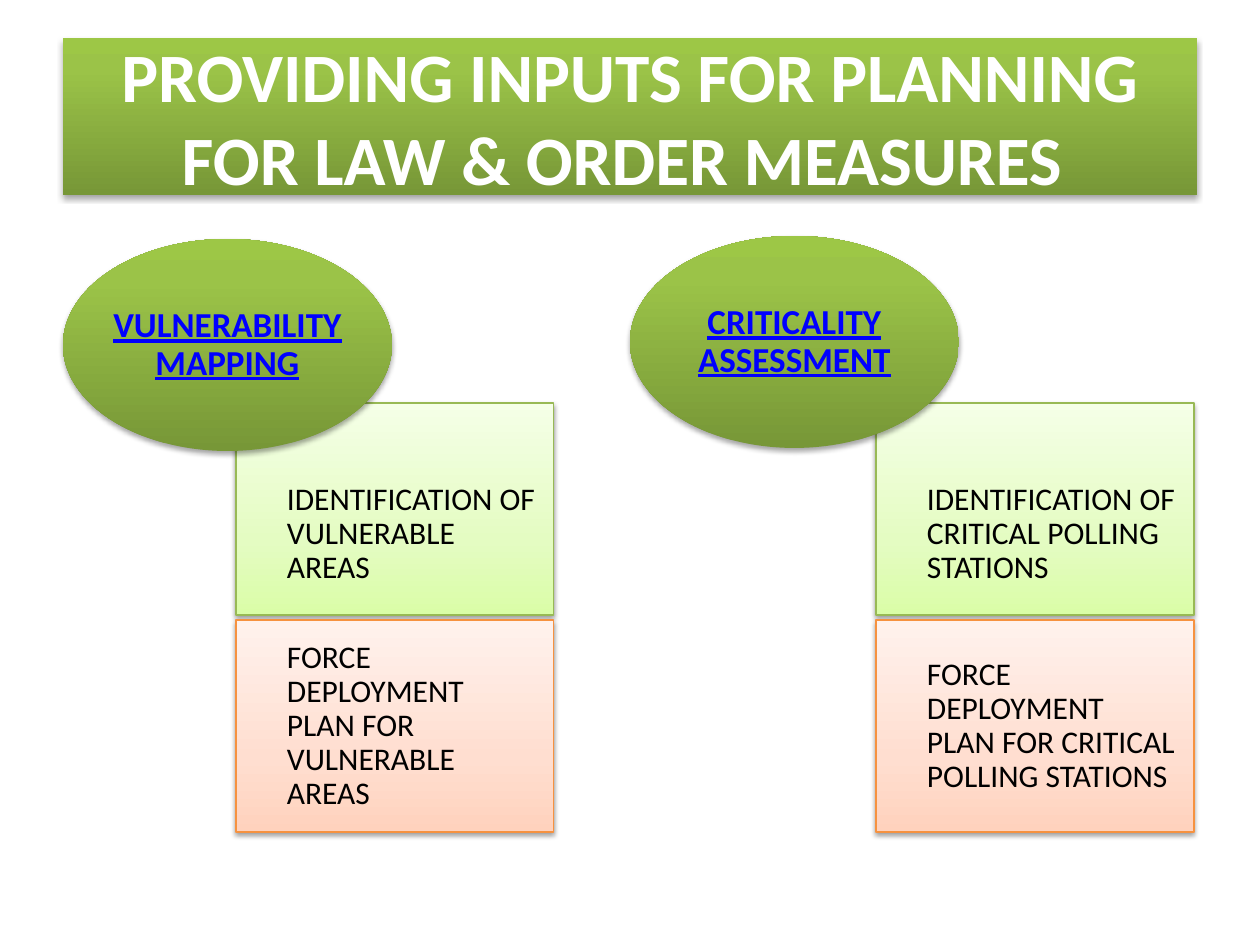
from dataclasses import dataclass

from lxml.etree import SubElement
from pptx import Presentation
from pptx.dml.color import RGBColor
from pptx.enum.shapes import MSO_SHAPE
from pptx.enum.text import MSO_ANCHOR, PP_ALIGN
from pptx.oxml.ns import qn
from pptx.slide import Slide
from pptx.util import Emu, Pt

EMU_PER_PX = 914400 / 126
FONT = "Calibri"
WHITE = RGBColor(0xFF, 0xFF, 0xFF)
BLACK = RGBColor(0x00, 0x00, 0x00)
LINK_BLUE = RGBColor(0x00, 0x00, 0xFF)
LEAF_DARK = RGBColor(0x77, 0x97, 0x37)
LEAF_MID = RGBColor(0x9B, 0xC3, 0x48)
LEAF_LIGHT = RGBColor(0x9D, 0xC7, 0x46)
LIME_DARK = RGBColor(0xDA, 0xFD, 0xA7)
LIME_MID = RGBColor(0xE4, 0xFC, 0xC2)
LIME_LIGHT = RGBColor(0xF5, 0xFF, 0xE7)
LIME_LINE = RGBColor(0x98, 0xB9, 0x55)
PEACH_DARK = RGBColor(0xFF, 0xD2, 0xBD)
PEACH_MID = RGBColor(0xFF, 0xDE, 0xD0)
PEACH_LIGHT = RGBColor(0xFF, 0xF2, 0xED)
PEACH_LINE = RGBColor(0xF6, 0x92, 0x40)


@dataclass(frozen=True)
class Style:
    """Insets are left, top, right, bottom in px; gradient stops run upwards."""
    geometry: MSO_SHAPE
    stops: tuple[tuple[int, RGBColor], ...]
    line: RGBColor | None
    shadow_percent: int
    shadow_distance: float
    insets: tuple[int, int, int, int]
    text_color: RGBColor
    text_size: float
    bold: bool = False
    underline: bool = False
    align: PP_ALIGN = PP_ALIGN.CENTER
    line_spacing: float = 0.9


@dataclass(frozen=True)
class Column:
    heading: str
    heading_left: int
    heading_top: int
    box_left: int
    identification: str
    deployment: str


LEAF_STOPS = ((0, LEAF_DARK), (80, LEAF_MID), (100, LEAF_LIGHT))
LIME_STOPS = ((0, LIME_DARK), (35, LIME_MID), (100, LIME_LIGHT))
PEACH_STOPS = ((0, PEACH_DARK), (35, PEACH_MID), (100, PEACH_LIGHT))

TITLE = Style(MSO_SHAPE.RECTANGLE, LEAF_STOPS, None, 35, 1.8, (13, 6, 13, 6),
              WHITE, 39.6, bold=True, line_spacing=1.0)
HEADING = Style(MSO_SHAPE.OVAL, LEAF_STOPS, None, 35, 1.8, (0, 0, 0, 0),
                LINK_BLUE, 20, bold=True, underline=True)
IDENTIFICATION = Style(MSO_SHAPE.RECTANGLE, LIME_STOPS, LIME_LINE, 38, 1.6,
                       (51, 68, 17, 18), BLACK, 18, align=PP_ALIGN.LEFT)
DEPLOYMENT = Style(MSO_SHAPE.RECTANGLE, PEACH_STOPS, PEACH_LINE, 38, 1.6,
                   (51, 18, 17, 18), BLACK, 18, align=PP_ALIGN.LEFT)

HEADING_WIDTH, BOX_WIDTH, ITEM_HEIGHT = 329, 318, 212
BOX_TOP, BOX_PITCH = 403, 217
COLUMNS = (
    Column("VULNERABILITY MAPPING", 63, 239, 236,
           "IDENTIFICATION OF VULNERABLE AREAS",
           "FORCE DEPLOYMENT PLAN FOR VULNERABLE AREAS"),
    Column("CRITICALITY ASSESSMENT", 630, 236, 876,
           "IDENTIFICATION OF CRITICAL POLLING STATIONS",
           "FORCE DEPLOYMENT PLAN FOR CRITICAL POLLING STATIONS"),
)


def px(length: int) -> Emu:
    return Emu(round(length * EMU_PER_PX))


def add_color(parent, color: RGBColor):
    return SubElement(parent, qn("a:srgbClr"), val=str(color))


def set_gradient(shape, stops: tuple[tuple[int, RGBColor], ...]) -> None:
    shape.fill.gradient()
    shape.fill.gradient_angle = 90
    stop_list = shape._element.spPr.find(qn("a:gradFill")).find(qn("a:gsLst"))
    for stop in list(stop_list):
        stop_list.remove(stop)
    for percent, color in stops:
        add_color(SubElement(stop_list, qn("a:gs"), pos=str(percent * 1000)), color)


def set_shadow(shape, percent: int, distance: float) -> None:
    shape.shadow.inherit = False
    effects = shape._element.spPr.find(qn("a:effectLst"))
    shadow = SubElement(effects, qn("a:outerShdw"), blurRad=str(Pt(3.1)),
                        dist=str(Pt(distance)), dir="5400000", rotWithShape="0")
    SubElement(add_color(shadow, BLACK), qn("a:alpha"), val=str(percent * 1000))


def add_block(slide: Slide, style: Style, text: str,
              left: int, top: int, width: int, height: int) -> None:
    shape = slide.shapes.add_shape(style.geometry, px(left), px(top),
                                   px(width), px(height))
    set_gradient(shape, style.stops)
    if style.line is None:
        shape.line.fill.background()
    else:
        shape.line.color.rgb = style.line
        shape.line.width = Pt(0.75)
    set_shadow(shape, style.shadow_percent, style.shadow_distance)

    frame = shape.text_frame
    frame.word_wrap = True
    frame.vertical_anchor = MSO_ANCHOR.MIDDLE
    (frame.margin_left, frame.margin_top,
     frame.margin_right, frame.margin_bottom) = map(px, style.insets)
    frame.text = text
    paragraph = frame.paragraphs[0]
    paragraph.alignment = style.align
    paragraph.line_spacing = style.line_spacing
    font = paragraph.runs[0].font
    font.name = FONT
    font.size = Pt(style.text_size)
    font.bold = style.bold
    font.underline = style.underline
    font.color.rgb = style.text_color


def add_column(slide: Slide, column: Column) -> None:
    boxes = ((IDENTIFICATION, column.identification),
             (DEPLOYMENT, column.deployment))
    for row, (style, text) in enumerate(boxes):
        add_block(slide, style, text, column.box_left, BOX_TOP + row * BOX_PITCH,
                  BOX_WIDTH, ITEM_HEIGHT)
    add_block(slide, HEADING, column.heading, column.heading_left,
              column.heading_top, HEADING_WIDTH, ITEM_HEIGHT)


def main() -> None:
    presentation = Presentation()
    presentation.slide_width = px(1260)
    presentation.slide_height = px(945)
    slide = presentation.slides.add_slide(presentation.slide_layouts[6])
    add_block(slide, TITLE, "PROVIDING INPUTS FOR PLANNING FOR LAW & ORDER MEASURES ",
              63, 38, 1134, 157)
    for column in COLUMNS:
        add_column(slide, column)
    presentation.save("out.pptx")


if __name__ == "__main__":
    main()
